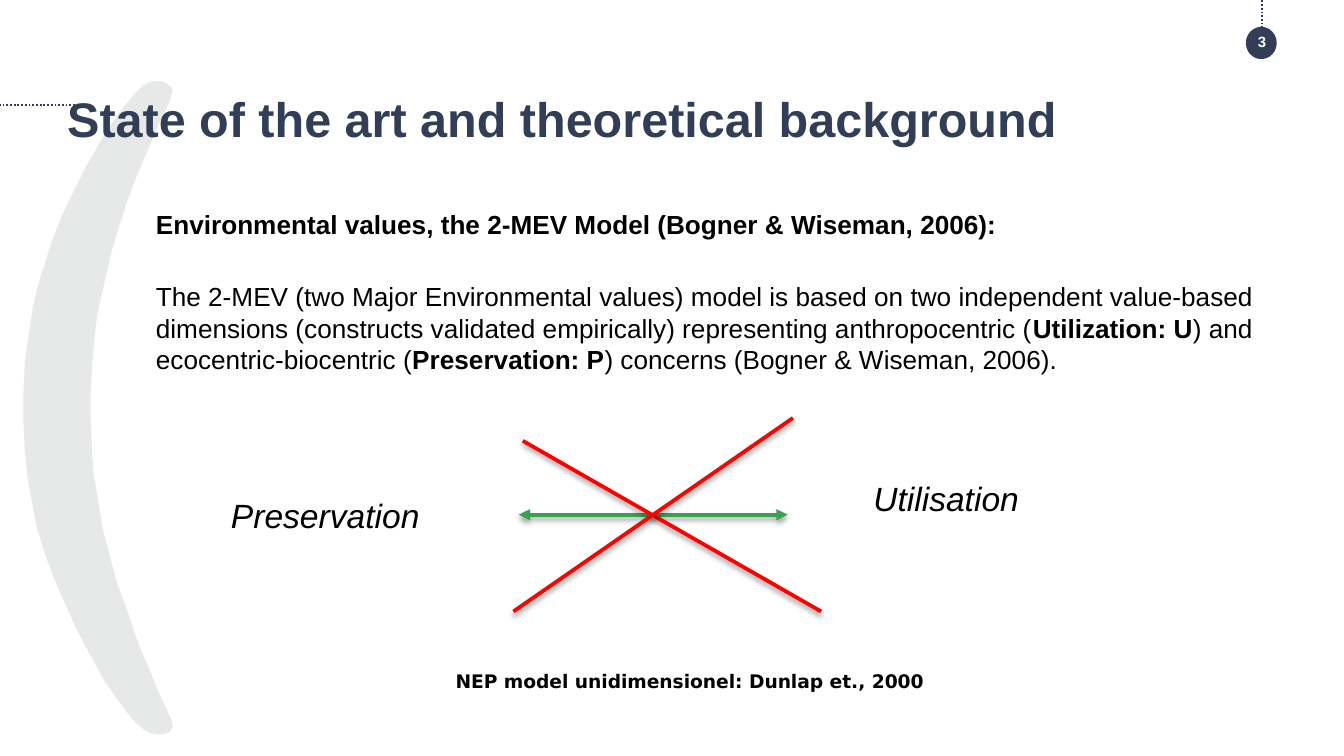
from lxml import etree
from pptx import Presentation
from pptx.dml.color import RGBColor
from pptx.enum.dml import MSO_LINE
from pptx.enum.shapes import MSO_CONNECTOR, MSO_SHAPE
from pptx.enum.text import MSO_ANCHOR as Anchor, MSO_AUTO_SIZE as Fit, PP_ALIGN as Align
from pptx.oxml import parse_xml
from pptx.oxml.ns import nsdecls, qn
from pptx.util import Inches, Pt

COLORS = {"navy": "313E56", "mist": "E7E8E8", "green": "38A250",
          "red": "FF0000", "black": "000000", "white": "FFFFFF"}

TITLE = "State of the art and theoretical background"
BODY = [  # paragraphs of (text, bold) runs
    [("Environmental values, the 2-MEV Model (Bogner & Wiseman, 2006):", True)],
    [("The 2-MEV (two Major Environmental values) model is based on two independent "
      "value-based dimensions (constructs validated empirically) representing "
      "anthropocentric (", False),
     ("Utilization: U", True),
     (") and ecocentric-biocentric (", False),
     ("Preservation: P", True),
     (") concerns (Bogner & Wiseman, 2006).", False)],
]
POLES = [("Preservation", (1.62, 3.63, 1.62, 0.4)),
         ("Utilisation", (6.4, 3.51, 1.3, 0.4))]
CAPTION = "NEP model unidimensionel: Dunlap et., 2000"
PAGE = "3"

DOTTED_LINES = [(9.39, 0.21, 9.39, 0), (0.64, 0.78, 0, 0.78)]
AXIS = (3.86, 3.83, 5.86, 3.83)
CROSS = [(3.89, 3.28, 6.11, 4.55), (3.82, 4.55, 5.9, 3.11)]

# Parenthesis outline: outer edge downwards, then inner edge upwards
OUTER_EDGE = [
    (1.28, 0.68), (1.27, 0.65), (1.21, 0.61), (1.13, 0.61), (1.07, 0.64), (1.01, 0.7),
    (0.94, 0.78), (0.88, 0.86), (0.81, 0.96), (0.75, 1.06), (0.64, 1.25), (0.56, 1.41),
    (0.47, 1.6), (0.39, 1.8), (0.34, 1.96), (0.29, 2.12), (0.25, 2.29), (0.22, 2.49),
    (0.19, 2.7), (0.18, 2.92), (0.18, 3.15), (0.19, 3.34), (0.21, 3.55), (0.24, 3.72),
    (0.28, 3.92), (0.34, 4.12), (0.41, 4.31), (0.49, 4.49), (0.56, 4.65), (0.67, 4.86),
    (0.78, 5.06), (0.87, 5.19), (0.96, 5.31), (1.01, 5.37), (1.07, 5.42), (1.12, 5.45),
    (1.18, 5.46), (1.21, 5.46), (1.26, 5.44), (1.28, 5.41)]
INNER_EDGE = [
    (1.28, 5.38), (1.24, 5.29), (1.17, 5.14), (1.11, 4.99), (1.04, 4.83), (0.99, 4.69),
    (0.94, 4.54), (0.87, 4.35), (0.81, 4.13), (0.76, 3.94), (0.72, 3.69), (0.69, 3.52),
    (0.68, 3.35), (0.67, 3.13), (0.67, 2.9), (0.68, 2.72), (0.7, 2.5), (0.72, 2.33),
    (0.76, 2.16), (0.82, 1.89), (0.88, 1.69), (0.93, 1.53), (1, 1.34), (1.08, 1.15),
    (1.14, 1.01), (1.2, 0.87), (1.25, 0.77), (1.27, 0.71)]

SHADOW = """<a:effectLst %s><a:outerShdw blurRad="39370" dist="20320" dir="5400000"
 rotWithShape="0"><a:srgbClr val="000000"><a:alpha val="38000"/></a:srgbClr>
</a:outerShdw></a:effectLst>""" % nsdecls("a")


def rgb(name):
    return RGBColor.from_string(COLORS[name])


def place(sp, box):
    sp.left, sp.top, sp.width, sp.height = map(Inches, box)


def setup_frame(tf, inset=(0, 0), **options):
    tf.margin_left = tf.margin_right = Inches(inset[0])
    tf.margin_top = tf.margin_bottom = Inches(inset[1])
    for key, value in {"word_wrap": True, "auto_size": Fit.NONE, **options}.items():
        setattr(tf, key, value)


def add_run(p, text, color="black", **font):
    r = p.add_run()
    r.text = text
    for key, value in {"name": "Arial", **font}.items():
        setattr(r.font, key, value)
    r.font.color.rgb = rgb(color)


def add_label(text, box, frame, align=Align.LEFT, **font):
    sp = slide.shapes.add_textbox(*map(Inches, box))
    setup_frame(sp.text_frame, **frame)
    p = sp.text_frame.paragraphs[0]
    p.alignment = align
    add_run(p, text, **font)


def add_line(ends, color, width, dash=None, shadow=False, arrows=False):
    line = slide.shapes.add_connector(MSO_CONNECTOR.STRAIGHT, *map(Inches, ends))
    line.line.color.rgb = rgb(color)
    line.line.width = Pt(width)
    if dash:
        line.line.dash_style = dash
    if arrows:
        ln = line.line._get_or_add_ln()
        for end in ("a:headEnd", "a:tailEnd"):
            etree.SubElement(ln, qn(end), type="triangle")
    effects = SHADOW if shadow else "<a:effectLst %s/>" % nsdecls("a")
    line._element.spPr.append(parse_xml(effects))


def paint(sp, color, outline):
    sp.shadow.inherit = False
    sp.fill.solid()
    sp.fill.fore_color.rgb = rgb(color)
    if outline:
        sp.line.color.rgb = rgb(color)
        sp.line.width = Pt(0.75)
    else:
        sp.line.fill.background()


prs = Presentation()
prs.slide_width = Inches(10)
prs.slide_height = prs.slide_width * 9 // 16
slide = prs.slides.add_slide(prs.slide_layouts[1])
title, body = slide.placeholders

# Decoration, sent behind the placeholders; the outline is drawn in 1/100 inch
start, *rest = [(round(x * 100), round(y * 100)) for x, y in OUTER_EDGE + INNER_EDGE]
builder = slide.shapes.build_freeform(*start, scale=Inches(0.01))
builder.add_line_segments(rest, close=True)
parenthesis = builder.convert_to_shape()
paint(parenthesis, "mist", outline=True)
badge = slide.shapes.add_shape(MSO_SHAPE.OVAL, *map(Inches, (9.27, 0.2, 0.23, 0.24)))
paint(badge, "navy", outline=False)
for ends in DOTTED_LINES:
    add_line(ends, "navy", 1, dash=MSO_LINE.ROUND_DOT)
for sp in (body, title):
    slide.shapes._spTree.append(sp._element)

# Title and body
place(title, (0.5, 0.66, 9, 0.53))
setup_frame(title.text_frame, vertical_anchor=Anchor.TOP)
p = title.text_frame.paragraphs[0]
p.alignment = Align.LEFT
add_run(p, TITLE, "navy", size=Pt(26), bold=True)

place(body, (1.16, 1.31, 8.34, 3.71))
tf = body.text_frame
setup_frame(tf, vertical_anchor=Anchor.TOP)
tf.margin_top = Inches(0.24)
for i, runs in enumerate(BODY):
    p = tf.add_paragraph() if i else tf.paragraphs[0]
    pPr = p._p.get_or_add_pPr()
    pPr.set("marL", "0")
    pPr.set("indent", "0")
    etree.SubElement(pPr, qn("a:buNone"))
    p.alignment = Align.LEFT
    p.space_before = Pt(22 if i else 0)
    for text, bold in runs:
        add_run(p, text, size=Pt(14), bold=bold)

# Page number and crossed-out one-dimensional model
add_label(PAGE, (9.14, 0.25, 0.5, 0.12),
          {"inset": (0.1, 0.05), "vertical_anchor": Anchor.MIDDLE},
          Align.CENTER, color="white", size=Pt(8), bold=True)
add_line(AXIS, "green", 2, shadow=True, arrows=True)
for text, box in POLES:
    add_label(text, box, {"inset": (0.1, 0.05), "word_wrap": False,
                          "auto_size": Fit.SHAPE_TO_FIT_TEXT},
              size=Pt(18), italic=True)
for ends in CROSS:
    add_line(ends, "red", 2, shadow=True)
add_label(CAPTION, (3.39, 4.98, 3.58, 0.17),
          {"vertical_anchor": Anchor.MIDDLE, "auto_size": Fit.SHAPE_TO_FIT_TEXT},
          name="DejaVu Sans", size=Pt(10), bold=True)

prs.save("out.pptx")
